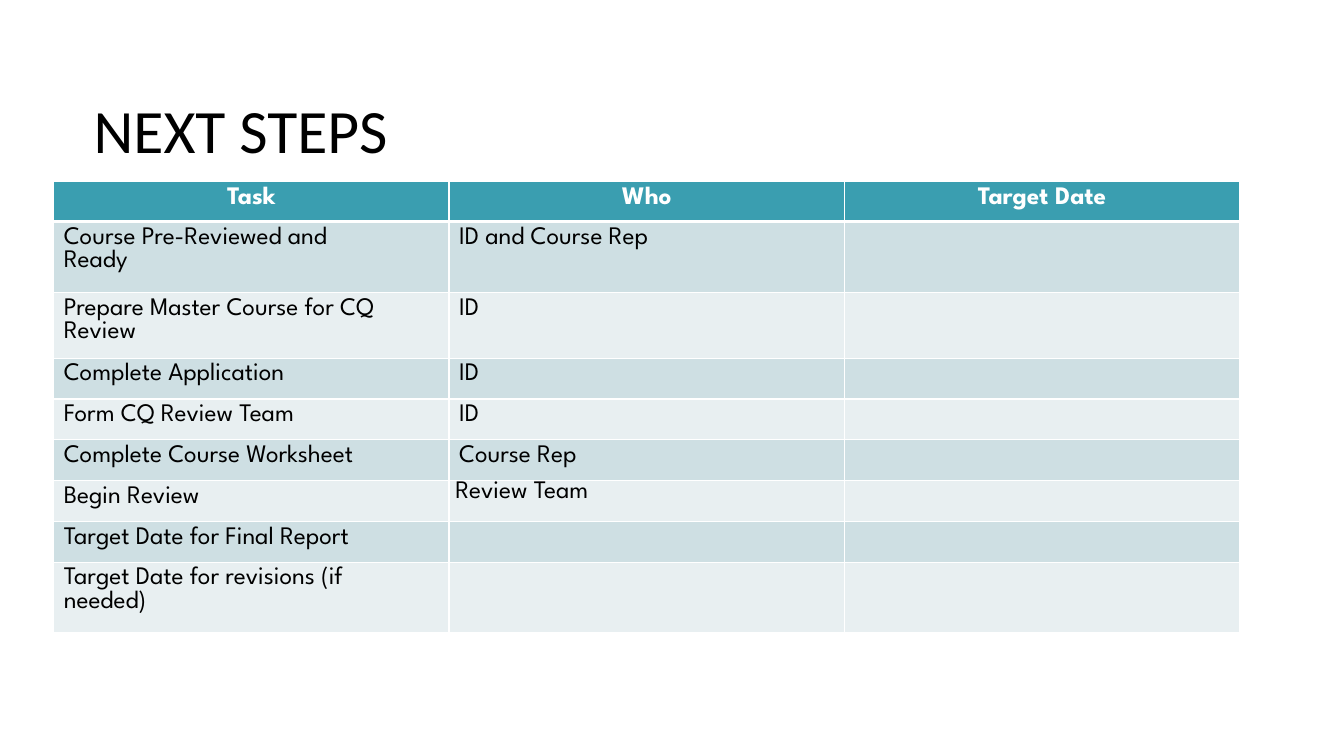
from dataclasses import dataclass

from lxml import etree
from pptx import Presentation
from pptx.dml.color import RGBColor
from pptx.enum.text import MSO_ANCHOR, PP_ALIGN
from pptx.oxml.ns import qn
from pptx.util import Inches, Pt

LEFT, MID = PP_ALIGN.LEFT, PP_ALIGN.CENTER
TOP, CORE = MSO_ANCHOR.TOP, MSO_ANCHOR.MIDDLE


@dataclass(frozen=True)
class Theme:
    ink: str = "000000"
    white: str = "FFFFFF"
    head: str = "3A9EB0"
    bands: tuple = ("CEDFE3", "E8EFF1")
    face: str = "Calibri"
    text: str = "League Spartan"
    big: int = 44
    size: int = 18
    thin: int = 1
    thick: int = 3


def apply(item, form):
    for name, value in form.items():
        setattr(item, name, value)


class Deck:
    def __init__(self, theme):
        self.theme = theme
        self.show = Presentation()
        self.show.slide_width = Inches(13.33)
        self.show.slide_height = Inches(7.5)
        self.slide = self.show.slides.add_slide(self.show.slide_layouts[5])

    def col(self, n):
        return round(self.show.slide_width * n / 100)

    def row(self, n):
        return round(self.show.slide_height * n / 100)

    def box(self, x, y, w, h):
        return dict(left=self.col(x), top=self.row(y),
                    width=self.col(w), height=self.row(h))

    def style(self, para, font, color, align, gap):
        apply(para, dict(alignment=align, space_before=Pt(gap)))
        for run in para.runs:
            apply(run.font, font)
            run.font.color.rgb = RGBColor.from_string(color)

    def title(self, text, place):
        shape = self.slide.shapes.title
        apply(shape, self.box(*place))
        frame = shape.text_frame
        apply(frame, dict(text=text, word_wrap=True, vertical_anchor=CORE,
                          margin_left=Inches(0.01), margin_top=Inches(0.31),
                          margin_right=0, margin_bottom=0))
        font = dict(name=self.theme.face, size=Pt(self.theme.big))
        self.style(frame.paragraphs[0], font, self.theme.ink, LEFT, 0.9)

    def edge(self, cell, side, width):
        props = cell._tc.get_or_add_tcPr()
        line = etree.SubElement(props, qn("a:ln" + side), w=str(Pt(width)))
        fill = etree.SubElement(line, qn("a:solidFill"))
        etree.SubElement(fill, qn("a:srgbClr"), val=self.theme.white)

    def cell(self, cell, text, r, c):
        look = self.theme
        head = r == 0
        flush = text.startswith(" ")
        pad = 0 if head or flush else Inches(0.1)
        apply(cell, dict(text=text, vertical_anchor=TOP, margin_left=pad,
                         margin_top=0 if flush else Inches(0.05),
                         margin_right=0 if head or c else Inches(0.6),
                         margin_bottom=0))
        font = dict(name=look.text, size=Pt(look.size), bold=head)
        for n, para in enumerate(cell.text_frame.paragraphs):
            self.style(para, font, look.white if head else look.ink,
                       MID if head else LEFT, 0 if n or flush else 3.2)
        wide = {"T": r == 1, "B": head}
        for side in "LRTB":
            self.edge(cell, side, look.thick if wide.get(side) else look.thin)
        cell.fill.solid()
        color = look.head if head else look.bands[(r - 1) % 2]
        cell.fill.fore_color.rgb = RGBColor.from_string(color)

    def table(self, data, place, tall):
        count = len(data[0])
        grid = self.slide.shapes.add_table(
            len(data), count, **self.box(*place)).table
        for part in grid.columns:
            part.width = self.col(place[2] / count)
        for part, size in zip(grid.rows, tall):
            part.height = self.row(size)
        for r, line in enumerate(data):
            for c, text in enumerate(line):
                self.cell(grid.cell(r, c), text, r, c)


STEPS = [
    ("Task", "Who", "Target Date"),
    ("Course Pre-Reviewed and Ready", "ID and Course Rep", ""),
    ("Prepare Master Course for CQ\nReview", "ID", ""),
    ("Complete Application", "ID", ""),
    ("Form CQ Review Team", "ID", ""),
    ("Complete Course Worksheet", "Course Rep", ""),
    ("Begin Review", " Review Team", ""),
    ("Target Date for Final Report", "", ""),
    ("Target Date for revisions (if needed)", "", ""),
]
TALL = [5.3, 9.4, 8.7] + [5.4] * 5 + [9.3]


def main():
    deck = Deck(Theme())
    deck.title("NEXT STEPS", (6.9, 5.3, 86.3, 19.4))
    deck.table(STEPS, (4, 24, 88.25, sum(TALL)), TALL)
    deck.show.save("out.pptx")


if __name__ == "__main__":
    main()
